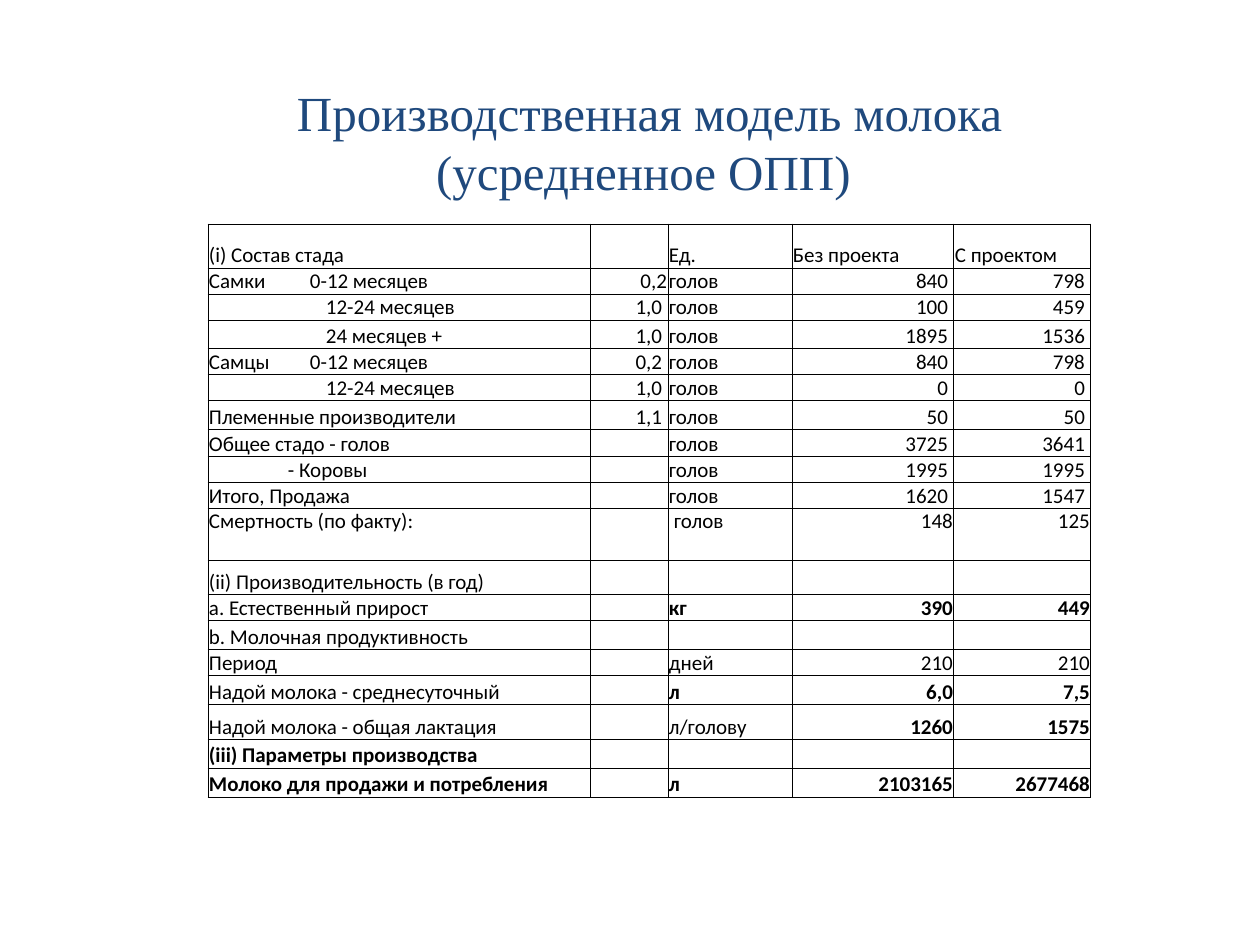
from lxml.etree import SubElement
from pptx import Presentation
from pptx.dml.color import RGBColor
from pptx.enum.text import MSO_ANCHOR, PP_ALIGN
from pptx.oxml.ns import qn
from pptx.util import Emu, Pt

EMU_PER_PX = 914400 // 126
COLORS = {"title": "1F497D", "text": "000000", "border": "000000"}
COLUMN_WIDTHS = [382, 78, 124, 162, 137]
TAB_STOP = 101
AGE_INDENT = 118
COWS_INDENT = 80
NUMBER_GAP = 6

# Height, cell texts, bold columns, label indent, right gap by column
ROWS = [
    (44, ["(i) Состав стада", "", "Ед.", "Без проекта", "С проектом"], (), 0, {}),
    (26, ["Самки\t0-12 месяцев", "0,2", "голов", "840", "798"], (), 0, {3, 4}),
    (26, ["12-24 месяцев", "1,0", "голов", "100", "459"], (), AGE_INDENT, {1, 3, 4}),
    (29, ["24 месяцев +", "1,0", "голов", "1895", "1536"], (), AGE_INDENT, {1, 3, 4}),
    (26, ["Самцы\t0-12 месяцев", "0,2", "голов", "840", "798"], (), 0, {1, 3, 4}),
    (26, ["12-24 месяцев", "1,0", "голов", "0", "0"], (), AGE_INDENT, {1, 3, 4}),
    (29, ["Племенные производители", "1,1", "голов", "50", "50"], (), 0, {1, 3, 4}),
    (27, ["Общее стадо - голов", "", "голов", "3725", "3641"], (), 0, {3, 4}),
    (26, ["- Коровы", "", "голов", "1995", "1995"], (), COWS_INDENT, {3, 4}),
    (26, ["Итого, Продажа", "", "голов", "1620", "1547"], (), 0, {3, 4}),
    (52, ["Смертность (по факту):", "", "\u00a0голов".strip(), "148", "125"], (), 0, {}),
    (34, ["(ii) Производительность (в год)", "", "", "", ""], (), 0, {}),
    (26, ["a. Естественный прирост", "", "кг", "390", "449"], (2, 3, 4), 0, {}),
    (29, ["b. Молочная продуктивность", "", "", "", ""], (), 0, {}),
    (26, ["Период", "", "дней", "210", "210"], (), 0, {}),
    (29, ["Надой молока - среднесуточный", "", "л", "6,0", "7,5"], (2, 3, 4), 0, {}),
    (35, ["Надой молока - общая лактация", "", "л/голову", "1260", "1575"], (3, 4), 0, {}),
    (29, ["(iii) Параметры производства", "", "", "", ""], (0,), 0, {}),
    (29, ["Молоко для продажи и потребления", "", "л", "2103165", "2677468"],
     (0, 2, 3, 4), 0, {}),
]
MORTALITY_ROW = 10


def px(length):
    return Emu(length * EMU_PER_PX)


class SlideBuilder:
    title_font, title_size = "Times New Roman", 28
    table_font, table_size = "Calibri", 12
    border_width = 0.5

    def __init__(self, slide):
        self.slide = slide

    def add_run(self, paragraph, text, name, size, color, bold=False):
        run = paragraph.add_run()
        run.text = text
        run.font.name = name
        run.font.size = Pt(size)
        run.font.bold = bold
        run.font.color.rgb = RGBColor.from_string(COLORS[color])

    def add_title(self, left, top, width, height, text):
        shape = self.slide.shapes.add_textbox(px(left), px(top), px(width), px(height))
        shape.text_frame.word_wrap = True
        paragraph = shape.text_frame.paragraphs[0]
        paragraph.alignment = PP_ALIGN.CENTER
        self.add_run(paragraph, text, self.title_font, self.title_size, "title")

    def add_table(self, left, top, widths, rows):
        heights = [row[0] for row in rows]
        frame = self.slide.shapes.add_table(
            len(rows), len(widths), px(left), px(top), px(sum(widths)), px(sum(heights)))
        table = frame.table
        table.first_row = table.horz_banding = False
        for column, width in zip(table.columns, widths):
            column.width = px(width)
        for row_index, (height, texts, bold, indent, gaps) in enumerate(rows):
            table.rows[row_index].height = px(height)
            for column_index, text in enumerate(texts):
                cell = table.cell(row_index, column_index)
                self.style_cell(cell, NUMBER_GAP if column_index in gaps else 1)
                if row_index == MORTALITY_ROW:
                    cell.vertical_anchor = MSO_ANCHOR.TOP
                paragraph = cell.text_frame.paragraphs[0]
                if row_index and column_index in (1, 3, 4):
                    paragraph.alignment = PP_ALIGN.RIGHT
                if column_index == 0 and indent:
                    cell.margin_left = px(indent)
                if row_index == MORTALITY_ROW and column_index == 2:
                    cell.margin_left = px(NUMBER_GAP)
                self.fill_paragraph(paragraph, text, column_index in bold)

    def fill_paragraph(self, paragraph, text, bold):
        """Write the text, with a tab stop if needed; an empty cell keeps the table size."""
        if not text:
            SubElement(paragraph._p, qn("a:endParaRPr"), sz=str(self.table_size * 100))
            return
        if "\t" in text:
            stops = SubElement(paragraph._p.get_or_add_pPr(), qn("a:tabLst"))
            SubElement(stops, qn("a:tab"), pos=str(px(TAB_STOP)), algn="l")
        self.add_run(paragraph, text, self.table_font, self.table_size, "text", bold)

    def style_cell(self, cell, right_margin):
        cell.margin_left, cell.margin_right = px(1), px(right_margin)
        cell.margin_top = cell.margin_bottom = 0
        cell.vertical_anchor = MSO_ANCHOR.BOTTOM
        properties = cell._tc.get_or_add_tcPr()
        for side in ("lnL", "lnR", "lnT", "lnB"):
            line = SubElement(properties, qn(f"a:{side}"), w=str(Pt(self.border_width)))
            fill = SubElement(line, qn("a:solidFill"))
            SubElement(fill, qn("a:srgbClr"), val=COLORS["border"])
        cell.fill.background()


def main():
    presentation = Presentation()
    presentation.slide_width, presentation.slide_height = px(1260), px(945)
    builder = SlideBuilder(presentation.slides.add_slide(presentation.slide_layouts[6]))
    builder.add_table(208, 224, COLUMN_WIDTHS, ROWS)
    builder.add_title(208, 76, 883, 131, "Производственная модель молока (усредненное ОПП) ")
    presentation.save("out.pptx")


if __name__ == "__main__":
    main()
